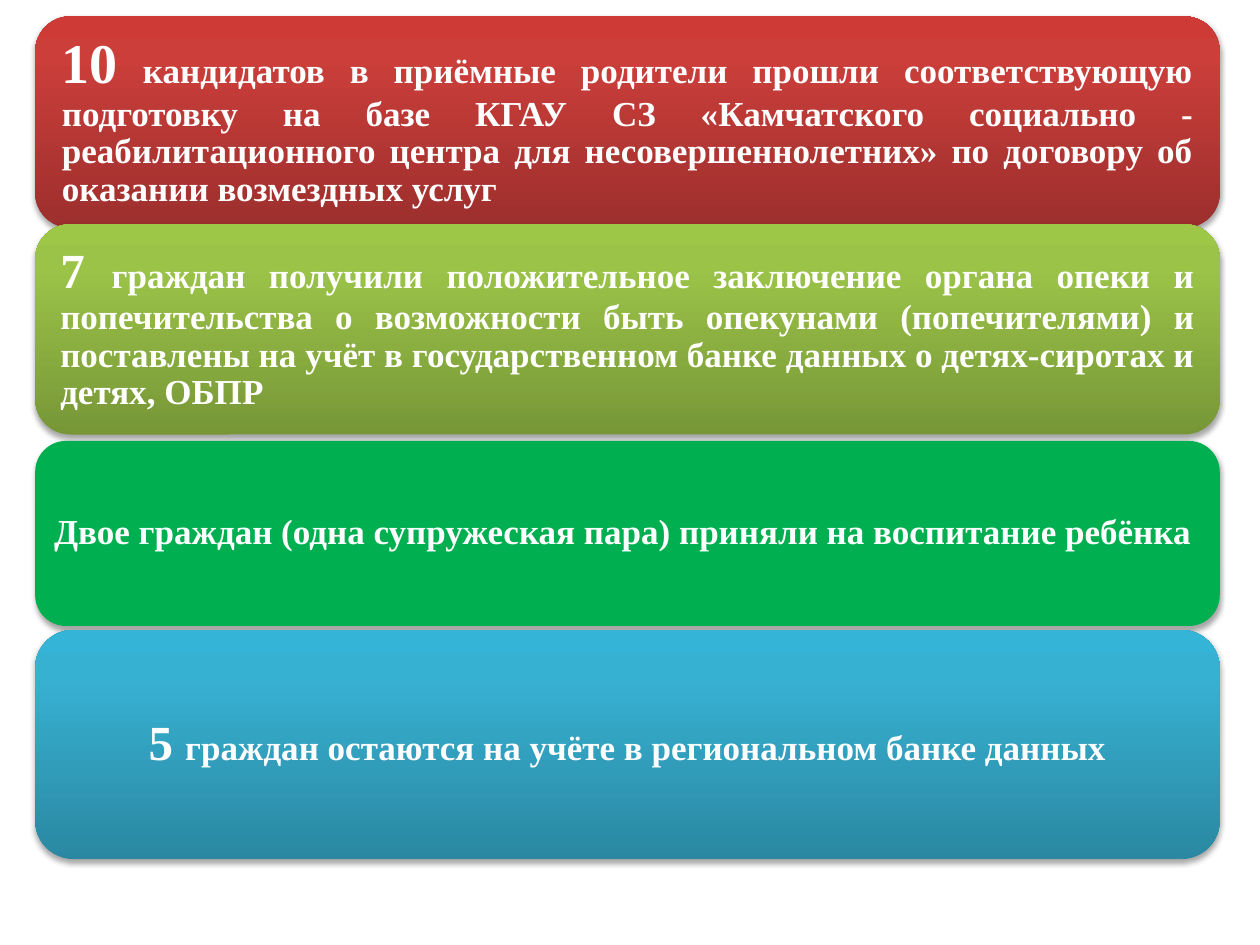
from lxml import etree
from pptx import Presentation
from pptx.dml.color import RGBColor
from pptx.enum.shapes import MSO_SHAPE
from pptx.enum.text import MSO_ANCHOR, PP_ALIGN
from pptx.oxml.ns import qn
from pptx.util import Cm, Pt

ROUNDED = MSO_SHAPE.ROUNDED_RECTANGLE
MIDDLE = MSO_ANCHOR.MIDDLE
LEFT, CENTER, JUSTIFY = PP_ALIGN.LEFT, PP_ALIGN.CENTER, PP_ALIGN.JUSTIFY

FONT = "Times New Roman"
WHITE = "FFFFFF"
BLANK_LAYOUT = 6
PANEL_LEFT, PANEL_WIDTH = 0.71, 23.88
GRADIENT_POSITIONS = (0, 80, 100)

PANELS = [
    (0.33, 4.27, 0.33, JUSTIFY, ("9C2F2D", "CB3E3A", "CE3B37"), [
        ("10", 32),
        (" кандидатов в приёмные родители прошли соответствующую подготовку "
         "на базе КГАУ СЗ «Камчатского социально - реабилитационного центра "
         "для несовершеннолетних» по договору об оказании возмездных услуг", 20)]),
    (4.52, 4.24, 0.3, JUSTIFY, ("779737", "9BC348", "9DC746"), [
        ("7 ", 28),
        ("граждан получили положительное заключение органа опеки и "
         "попечительства о возможности быть опекунами (попечителями) и "
         "поставлены на учёт в государственном банке данных о детях-сиротах "
         "и детях, ОБПР", 20)]),
    (8.89, 3.73, 0.2, LEFT, ("00B050",), [
        ("Двое граждан (одна супружеская пара) приняли на воспитание ребёнка", 20)]),
    (12.7, 4.62, 0.3, CENTER, ("2A88A2", "37B1D2", "34B4D6"), [
        ("5 ", 28),
        ("граждан остаются на учёте в региональном банке данных", 20)]),
]


def color(value):
    return RGBColor.from_string(value)


def add_color(parent, value):
    return etree.SubElement(parent, qn("a:srgbClr"), val=value)


def fill_panel(shape, colors):
    if len(colors) == 1:
        shape.fill.solid()
        shape.fill.fore_color.rgb = color(colors[0])
        return
    shape.fill.gradient()
    shape.fill.gradient_angle = 90
    stops = shape.element.spPr.find(".//" + qn("a:gsLst"))
    for stop in list(stops):
        stops.remove(stop)
    for position, value in zip(GRADIENT_POSITIONS, colors):
        add_color(etree.SubElement(stops, qn("a:gs"), pos=str(position * 1000)), value)


def add_shadow(shape):
    shape.shadow.inherit = False
    effects = shape.element.spPr.find(qn("a:effectLst"))
    shadow = etree.SubElement(
        effects, qn("a:outerShdw"), blurRad=str(Pt(3.1)), dist=str(Pt(1.8)),
        dir="5400000", rotWithShape="0")
    etree.SubElement(add_color(shadow, "000000"), qn("a:alpha"), val="35000")


def write_text(shape, inset, alignment, parts):
    frame = shape.text_frame
    frame.word_wrap = True
    frame.vertical_anchor = MIDDLE
    frame.margin_left = frame.margin_right = Cm(inset)
    frame.margin_top = frame.margin_bottom = Cm(inset)
    paragraph = frame.paragraphs[0]
    paragraph.alignment = alignment
    paragraph.line_spacing = 0.9
    for text, size in parts:
        run = paragraph.add_run()
        run.text = text
        run.font.name = FONT
        run.font.size = Pt(size)
        run.font.bold = True
        run.font.color.rgb = color(WHITE)


def add_panel(slide, top, height, inset, alignment, colors, parts):
    shape = slide.shapes.add_shape(
        ROUNDED, Cm(PANEL_LEFT), Cm(top), Cm(PANEL_WIDTH), Cm(height))
    fill_panel(shape, colors)
    shape.line.fill.background()
    add_shadow(shape)
    write_text(shape, inset, alignment, parts)


def main():
    presentation = Presentation()
    presentation.slide_width = Cm(25.4)
    presentation.slide_height = Cm(19.05)
    slide = presentation.slides.add_slide(presentation.slide_layouts[BLANK_LAYOUT])
    for panel in PANELS:
        add_panel(slide, *panel)
    presentation.save("out.pptx")


if __name__ == "__main__":
    main()
